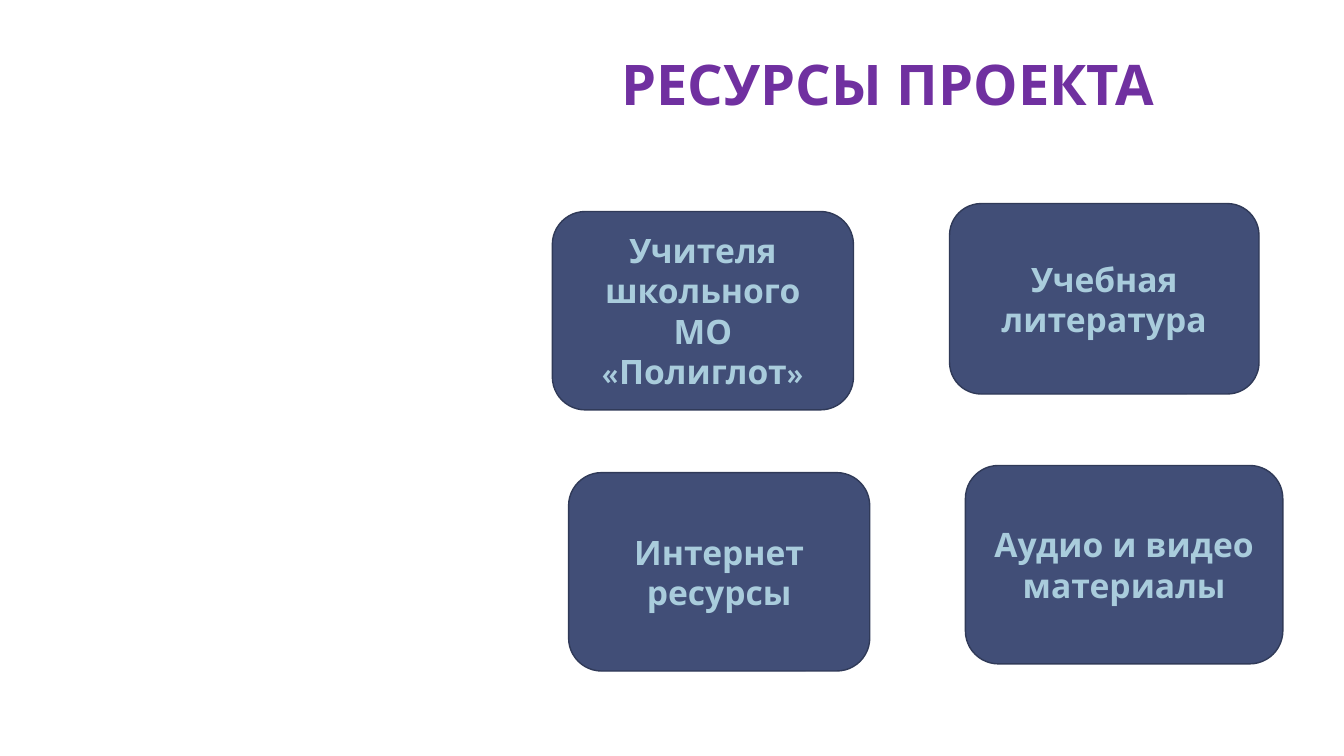
from dataclasses import dataclass

from pptx import Presentation
from pptx.dml.color import RGBColor
from pptx.enum.shapes import MSO_SHAPE
from pptx.enum.text import MSO_ANCHOR, MSO_AUTO_SIZE, PP_ALIGN
from pptx.slide import Slide
from pptx.text.text import TextFrame
from pptx.util import Cm, Pt

FONT = "League Spartan"


@dataclass(frozen=True)
class Resource:
    label: str
    left: float
    top: float
    width: float
    height: float


RESOURCES = [
    Resource("Учителя школьного МО «Полиглот»", 13.92, 5.33, 7.59, 5.0),
    Resource("Учебная литература", 23.93, 5.13, 7.8, 4.8),
    Resource("Интернет ресурсы", 14.33, 11.91, 7.59, 5.0),
    Resource("Аудио и видео материалы", 24.33, 11.73, 8.0, 5.0),
]


def color(hex_value: str) -> RGBColor:
    return RGBColor.from_string(hex_value)


def write_centred(frame: TextFrame, text: str, size: int, hex_value: str) -> None:
    frame.word_wrap = True
    paragraph = frame.paragraphs[0]
    paragraph.alignment = PP_ALIGN.CENTER
    run = paragraph.add_run()
    run.text = text
    run.font.name = FONT
    run.font.size = Pt(size)
    run.font.bold = True
    run.font.color.rgb = color(hex_value)


def add_heading(slide: Slide, text: str) -> None:
    heading = slide.shapes.title
    heading.left, heading.top = Cm(14.12), Cm(0.74)
    heading.width, heading.height = Cm(16.51), Cm(4.8)
    frame = heading.text_frame
    frame.auto_size = MSO_AUTO_SIZE.NONE
    frame.vertical_anchor = MSO_ANCHOR.TOP
    frame.margin_left = frame.margin_right = Cm(0.33)
    frame.margin_top, frame.margin_bottom = Cm(0.64), Cm(0.18)
    write_centred(frame, text, 40, "7030A0")
    frame.paragraphs[0].line_spacing = 0.95


def add_resource(slide: Slide, resource: Resource) -> None:
    card = slide.shapes.add_shape(
        MSO_SHAPE.ROUNDED_RECTANGLE,
        Cm(resource.left), Cm(resource.top),
        Cm(resource.width), Cm(resource.height),
    )
    card.shadow.inherit = False
    card.fill.solid()
    card.fill.fore_color.rgb = color("414E77")
    card.line.color.rgb = color("303A58")
    card.line.width = Pt(1)
    card.text_frame.vertical_anchor = MSO_ANCHOR.MIDDLE
    write_centred(card.text_frame, resource.label, 24, "A9CCDC")


def main() -> None:
    presentation = Presentation()
    presentation.slide_width, presentation.slide_height = Cm(33.87), Cm(19.05)
    slide = presentation.slides.add_slide(presentation.slide_layouts.get_by_name("Title Only"))

    # Background and heading
    slide.background.fill.solid()
    slide.background.fill.fore_color.rgb = color("FFFFFF")
    add_heading(slide, "РЕСУРСЫ ПРОЕКТА")

    # Resource cards
    for resource in RESOURCES:
        add_resource(slide, resource)

    presentation.save("out.pptx")


if __name__ == "__main__":
    main()
